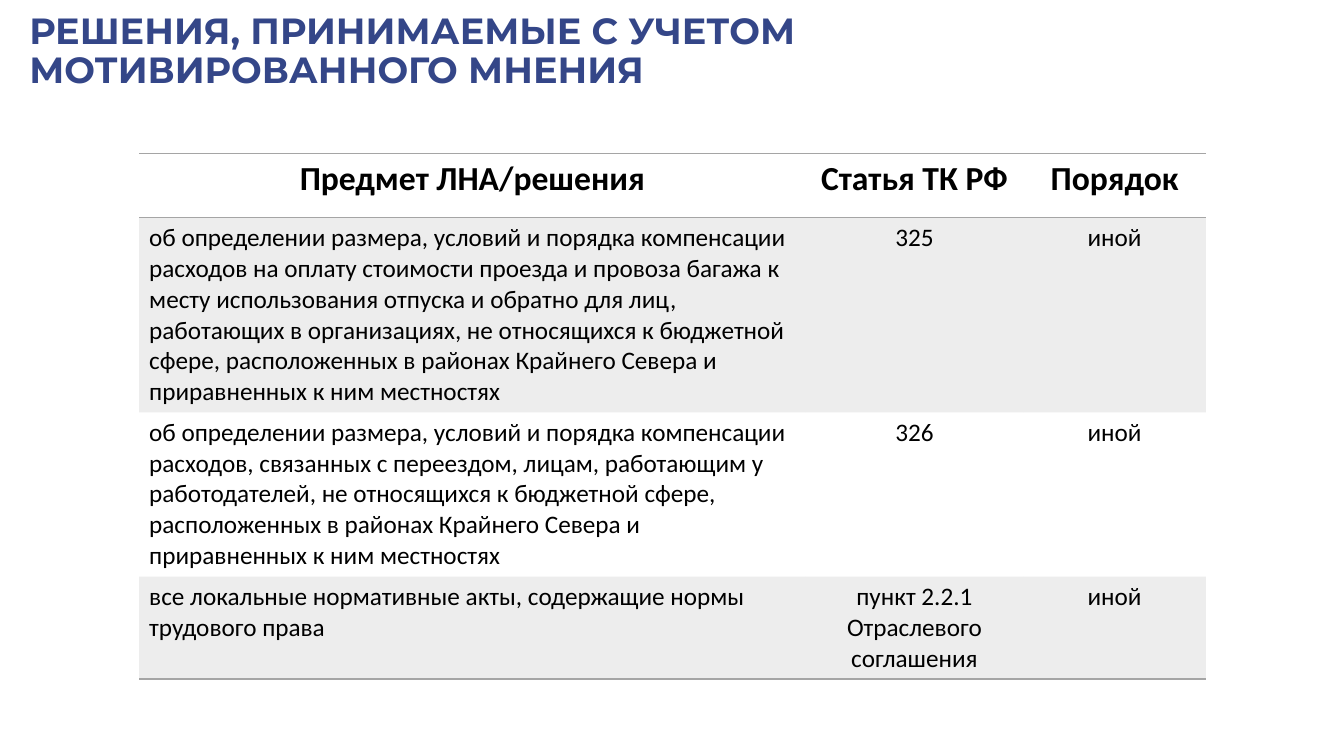
from dataclasses import dataclass

from lxml.etree import SubElement
from pptx import Presentation
from pptx.dml.color import RGBColor
from pptx.enum.text import MSO_ANCHOR, MSO_AUTO_SIZE, PP_ALIGN
from pptx.oxml import parse_xml
from pptx.oxml.ns import nsdecls, qn
from pptx.util import Inches, Pt

TITLE = "РЕШЕНИЯ, ПРИНИМАЕМЫЕ С УЧЕТОМ МОТИВИРОВАННОГО МНЕНИЯ"
ROWS = [
    ("Предмет ЛНА/решения", "Статья ТК РФ", "Порядок"),
    (
        "об определении размера, условий и порядка компенсации расходов на оплату "
        "стоимости проезда и провоза багажа к месту использования отпуска и обратно "
        "для лиц, работающих в организациях, не относящихся к бюджетной сфере, "
        "расположенных в районах Крайнего Севера и приравненных к ним местностях",
        "325",
        "иной",
    ),
    (
        "об определении размера, условий и порядка компенсации расходов, связанных "
        "с переездом, лицам, работающим у работодателей, не относящихся к бюджетной "
        "сфере, расположенных в районах Крайнего Севера и приравненных к ним местностях",
        "326",
        "иной",
    ),
    (
        "все локальные нормативные акты, содержащие нормы трудового права",
        "пункт 2.2.1 Отраслевого соглашения",
        "иной",
    ),
]
COLUMN_WIDTHS = (6.61, 2.16, 1.81)
ROW_HEIGHTS = (0.64, 1.93, 1.63, 1.01)
PLAIN_TABLE_STYLE = "{2D5ABB26-0587-4C30-8999-92F81FD0307C}"


@dataclass(frozen=True)
class Theme:
    title_font: str = "Montserrat"
    body_font: str = "Calibri"
    title_color: str = "344688"
    text_color: str = "000000"
    gray: str = "A5A5A5"
    band_alpha: int = 20000
    title_size: int = 26
    header_size: int = 24
    body_size: int = 18


THEME = Theme()


def add_text(paragraph, text, font_name, size, color, bold):
    run = paragraph.add_run()
    run.text = text
    run.font.name = font_name
    run.font.size = Pt(size)
    run.font.bold = bold
    run.font.color.rgb = RGBColor.from_string(color)


def add_border(cell, tag, position):
    border = parse_xml(
        f'<a:{tag} {nsdecls("a")} w="{Pt(1)}"><a:solidFill>'
        f'<a:srgbClr val="{THEME.gray}"/></a:solidFill></a:{tag}>'
    )
    cell._tc.get_or_add_tcPr().insert(position, border)


def fill_cell(cell, banded):
    if not banded:
        cell.fill.background()
        return
    cell.fill.solid()
    cell.fill.fore_color.rgb = RGBColor.from_string(THEME.gray)
    color = cell._tc.tcPr.find(qn("a:solidFill")).find(qn("a:srgbClr"))
    SubElement(color, qn("a:alpha")).set("val", str(THEME.band_alpha))


def add_title(slide):
    title = slide.shapes.title
    title.left, title.top = Inches(0.19), Inches(0.19)
    title.width, title.height = Inches(10.41), Inches(0.66)
    frame = title.text_frame
    frame.word_wrap = True
    frame.auto_size = MSO_AUTO_SIZE.NONE
    frame.vertical_anchor = MSO_ANCHOR.MIDDLE
    paragraph = frame.paragraphs[0]
    paragraph.alignment = PP_ALIGN.LEFT
    paragraph.line_spacing = 0.9
    add_text(paragraph, TITLE, THEME.title_font, THEME.title_size, THEME.title_color, True)


def add_decisions_table(slide):
    shape = slide.shapes.add_table(
        len(ROWS), len(COLUMN_WIDTHS), Inches(1.38), Inches(1.52),
        Inches(sum(COLUMN_WIDTHS)), Inches(sum(ROW_HEIGHTS)),
    )
    table = shape.table
    table._tbl.tblPr.find(qn("a:tableStyleId")).text = PLAIN_TABLE_STYLE
    for column, width in zip(table.columns, COLUMN_WIDTHS):
        column.width = Inches(width)
    for row, height in zip(table.rows, ROW_HEIGHTS):
        row.height = Inches(height)

    for row_index, values in enumerate(ROWS):
        is_header = row_index == 0
        size = THEME.header_size if is_header else THEME.body_size
        for column_index, value in enumerate(values):
            cell = table.cell(row_index, column_index)
            fill_cell(cell, row_index % 2 == 1)
            if is_header or row_index == len(ROWS) - 1:
                add_border(cell, "lnB", 0)
            if is_header:
                add_border(cell, "lnT", 0)
            paragraph = cell.text_frame.paragraphs[0]
            centered = is_header or column_index > 0
            paragraph.alignment = PP_ALIGN.CENTER if centered else PP_ALIGN.LEFT
            add_text(paragraph, value, THEME.body_font, size, THEME.text_color, is_header)


def main():
    presentation = Presentation()
    presentation.slide_width = Inches(13.33)
    presentation.slide_height = Inches(7.5)
    slide = presentation.slides.add_slide(presentation.slide_layouts[5])
    add_title(slide)
    add_decisions_table(slide)
    presentation.save("out.pptx")


if __name__ == "__main__":
    main()
